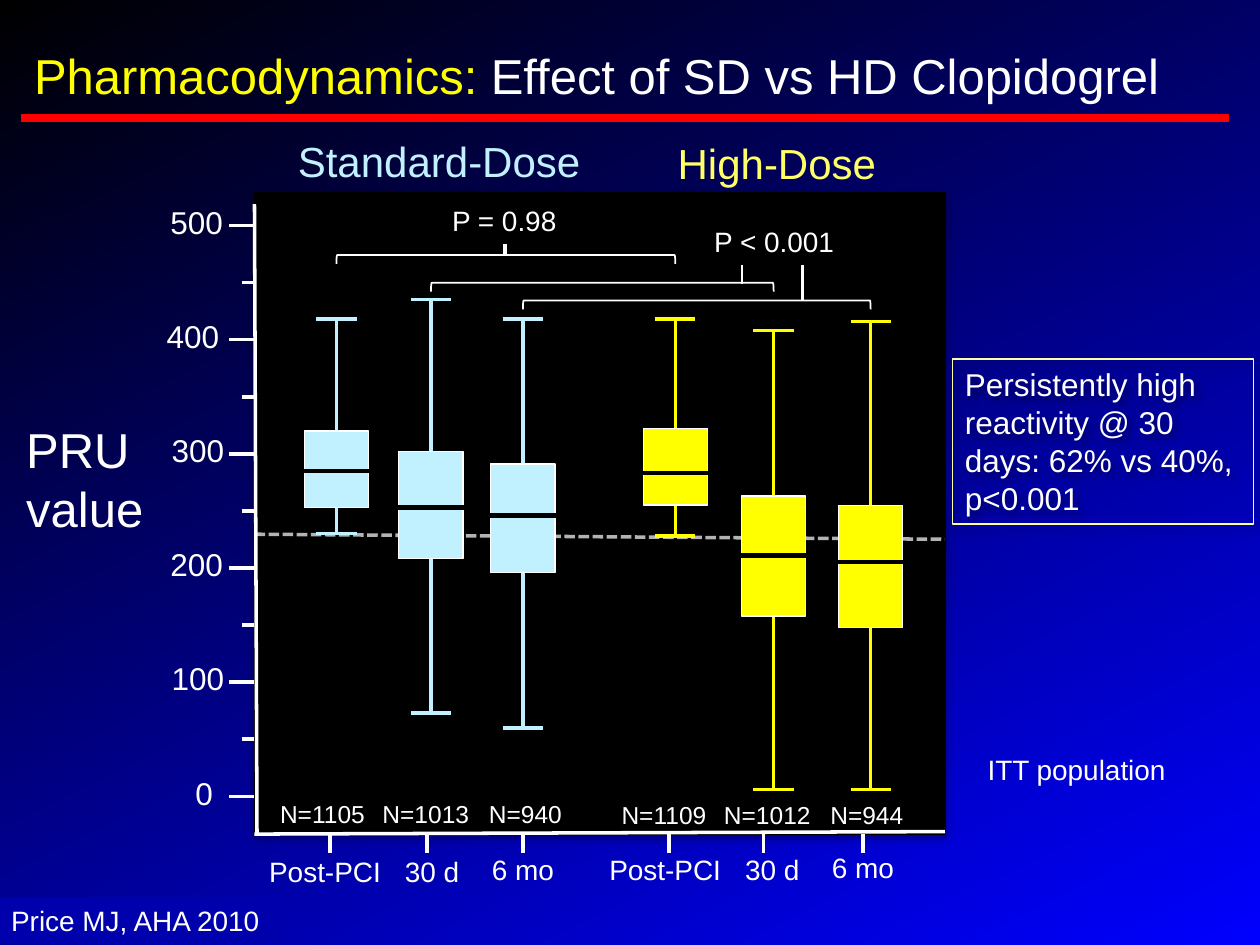
"""Build a slide with box plots of platelet reactivity for two clopidogrel doses."""
from dataclasses import dataclass

from lxml import etree
from pptx import Presentation
from pptx.dml.color import RGBColor
from pptx.enum.dml import MSO_LINE
from pptx.enum.shapes import MSO_CONNECTOR, MSO_SHAPE
from pptx.enum.text import MSO_ANCHOR, PP_ALIGN
from pptx.oxml.ns import qn
from pptx.util import Inches, Pt

STRAIGHT = MSO_CONNECTOR.STRAIGHT
RECTANGLE, BRACKET = MSO_SHAPE.RECTANGLE, MSO_SHAPE.LEFT_BRACKET
LEFT, CENTER = PP_ALIGN.LEFT, PP_ALIGN.CENTER
TOP, MIDDLE = MSO_ANCHOR.TOP, MSO_ANCHOR.MIDDLE
SHORT_DASH = MSO_LINE.SQUARE_DOT


@dataclass(frozen=True)
class Theme:
    font: str = "Arial"
    black: str = "000000"
    white: str = "FFFFFF"
    blue: str = "0000FF"
    citation_fill: str = "0000AC"
    red: str = "FF0000"
    yellow: str = "FFFF00"
    high_label: str = "FFFF66"
    standard: str = "C1F1FF"
    gray: str = "B3B3B3"
    callout_line: str = "FBFFA1"
    title: int = 28
    heading: int = 24
    body: int = 18
    label: int = 16
    count: int = 14


THEME = Theme()
TITLE = [("Pharmacodynamics: ", THEME.yellow), ("Effect of SD vs HD Clopidogrel", THEME.white)]
CALLOUT = "Persistently high reactivity @ 30 days: 62% vs 40%, p<0.001"
CITATION = "Price MJ, AHA 2010"

# label, count, centre, tick x, label x, label top, count x, count top, (maximum, upper, median, lower, minimum)
STANDARD_DOSE = [
    ("Post-PCI", "N=1105", 2.67, 2.62, 2.58, 6.73, 2.56, 6.29, (418, 320, 285, 253, 230)),
    ("30 d", "N=1013", 3.42, 3.39, 3.43, 6.73, 3.38, 6.29, (435, 302, 253, 208, 73)),
    ("6 mo", "N=940", 4.15, 4.15, 4.15, 6.72, 4.17, 6.29, (418, 291, 246, 196, 60)),
]
HIGH_DOSE = [
    ("Post-PCI", "N=1109", 5.36, 5.31, 5.28, 6.72, 5.27, 6.30, (418, 322, 283, 255, 228)),
    ("30 d", "N=1012", 6.14, 6.06, 6.13, 6.72, 6.09, 6.30, (408, 263, 211, 158, 6)),
    ("6 mo", "N=944", 6.91, 6.85, 6.85, 6.70, 6.88, 6.30, (416, 255, 205, 148, 6)),
]
GROUPS = [(STANDARD_DOSE, THEME.standard), (HIGH_DOSE, THEME.yellow)]
AXIS_LABELS = [(500, 1.56), (400, 1.53), (300, 1.57), (200, 1.56), (100, 1.57), (0, 1.62)]
BRACKET_LEVELS = [2.06, 2.28, 2.42]
COMPARISON_STEMS = [(4.01, 1.94, 2.02, 2), (5.89, 2.10, 2.25, 1.5), (6.37, 2.10, 2.38, 1.5)]
# text, left, top, width, height, size, colour, alignment
LABELS = [
    ("Standard-Dose", 2.25, 1.03, 2.47, 0.5, THEME.heading, THEME.standard, CENTER),
    ("High-Dose", 5.27, 1.04, 1.79, 0.5, THEME.heading, THEME.high_label, CENTER),
    ("PRU\nvalue", 0.11, 3.28, 1.15, 1.04, THEME.title, THEME.white, LEFT),
    ("P = 0.98", 3.49, 1.57, 1.04, 0.37, THEME.label, THEME.white, LEFT),
    ("P < 0.001", 5.57, 1.73, 1.16, 0.37, THEME.label, THEME.white, LEFT),
    ("ITT population", 7.74, 5.92, 1.63, 0.37, THEME.label, THEME.white, LEFT),
]
AXIS_X, AXIS_RIGHT, AXIS_BOTTOM = 2.02, 7.5, 6.62
ZERO_Y, FULL_SCALE, FULL_HEIGHT = 6.32, 500, 4.53
BOX_WIDTH, MEDIAN_WIDTH, CAP_WIDTH, BRACKET_DEPTH = 0.51, 0.53, 0.32, 0.07


def color(value):
    return RGBColor.from_string(value)


def value_y(value):
    return ZERO_Y - value * FULL_HEIGHT / FULL_SCALE


def add_line(slide, start, end, line_color, width=2.0, dash=None):
    line = slide.shapes.add_connector(STRAIGHT, *map(Inches, (*start, *end)))
    line.line.color.rgb = color(line_color)
    line.line.width = Pt(width)
    if dash:
        line.line.dash_style = dash
    etree.SubElement(line.element.spPr, qn("a:effectLst"))


def add_bar(slide, center, y, width, line_color, weight=2.0):
    add_line(slide, (center - width / 2, y), (center + width / 2, y), line_color, weight)


def add_shape(slide, kind, box, fill=None, line=None, width=0.75):
    shape = slide.shapes.add_shape(kind, *map(Inches, box))
    shape.shadow.inherit = False
    if fill:
        shape.fill.solid()
        shape.fill.fore_color.rgb = color(fill)
    else:
        shape.fill.background()
    if line:
        shape.line.color.rgb = color(line)
        shape.line.width = Pt(width)
    else:
        shape.line.fill.background()
    return shape


def add_shadow(shape, alpha, blur, distance, angle):
    effects = shape.element.spPr.find(qn("a:effectLst"))
    shadow = etree.SubElement(effects, qn("a:outerShdw"), blurRad=str(Pt(blur)),
                              dist=str(Pt(distance)), dir=str(angle * 60000), rotWithShape="0")
    shade = etree.SubElement(shadow, qn("a:srgbClr"), val=THEME.black)
    etree.SubElement(shade, qn("a:alpha"), val=str(alpha * 1000))


def set_text(shape, text, size, text_color=THEME.white, align=LEFT, wrap=False, anchor=TOP):
    frame = shape.text_frame
    frame.text = text
    frame.word_wrap = wrap
    frame.vertical_anchor = anchor
    for paragraph in frame.paragraphs:
        paragraph.alignment = align
        paragraph.font.name = THEME.font
        paragraph.font.size = Pt(size)
        paragraph.font.color.rgb = color(text_color)


def add_label(slide, text, left, top, width, height, size, text_color=THEME.white, align=CENTER):
    label = slide.shapes.add_textbox(*map(Inches, (left, top, width, height)))
    set_text(label, text, size, text_color, align)


def add_title(slide):
    title = slide.shapes.title
    title.left, title.top, title.width, title.height = map(Inches, (0.17, 0.31, 9.83, 0.57))
    title.text_frame.vertical_anchor = MIDDLE
    paragraph = title.text_frame.paragraphs[0]
    paragraph.alignment = LEFT
    paragraph.font.name = THEME.font
    paragraph.font.size = Pt(THEME.title)
    for text, text_color in TITLE:
        run = paragraph.add_run()
        run.text = text
        run.font.color.rgb = color(text_color)
    add_line(slide, (0.17, 0.94), (9.75, 0.94), THEME.red, 4.5)


def add_axes(slide):
    add_line(slide, (AXIS_X, 1.62), (AXIS_X + 0.02, AXIS_BOTTOM), THEME.white)
    add_line(slide, (AXIS_X, AXIS_BOTTOM), (AXIS_RIGHT, AXIS_BOTTOM - 0.02), THEME.white)
    for value in range(0, FULL_SCALE + 1, 50):
        length = 0.1 if value % 100 else 0.2
        add_line(slide, (AXIS_X - length, value_y(value)), (AXIS_X, value_y(value)), THEME.white)
    for value, center in AXIS_LABELS:
        add_label(slide, str(value), center - 0.31, value_y(value) - 0.23, 0.62, 0.4, THEME.body)


def add_box_plot(slide, record, fill):
    name, count, center, tick_x, name_x, name_top, count_x, count_top, values = record
    maximum, upper, median, lower, minimum = map(value_y, values)
    add_line(slide, (center, maximum), (center, minimum), fill)
    add_shape(slide, RECTANGLE, (center - BOX_WIDTH / 2, upper, BOX_WIDTH, lower - upper),
              fill, THEME.white)
    add_bar(slide, center, median, MEDIAN_WIDTH, THEME.black, 2.5)
    for cap in (maximum, minimum):
        add_bar(slide, center, cap, CAP_WIDTH, fill)
    add_line(slide, (tick_x, AXIS_BOTTOM), (tick_x, AXIS_BOTTOM + 0.15), THEME.white)
    add_label(slide, name, name_x - 0.55, name_top, 1.1, 0.37, THEME.label)
    add_label(slide, count, count_x - 0.45, count_top, 0.9, 0.34, THEME.count)


def add_comparisons(slide):
    for standard, high, level in zip(STANDARD_DOSE, HIGH_DOSE, BRACKET_LEVELS):
        span, middle = high[2] - standard[2], (high[2] + standard[2]) / 2
        box = (middle - BRACKET_DEPTH / 2, level - span / 2, BRACKET_DEPTH, span)
        bracket = add_shape(slide, BRACKET, box, line=THEME.white, width=1)
        bracket.rotation = 90
        bracket.adjustments[0] = 0.08
    for x, top, bottom, width in COMPARISON_STEMS:
        add_line(slide, (x, top), (x, bottom), THEME.white, width)


def main():
    presentation = Presentation()
    presentation.slide_width, presentation.slide_height = Inches(10), Inches(7.5)
    slide = presentation.slides.add_slide(presentation.slide_layouts[5])
    background = slide.background.fill
    background.gradient()
    background.gradient_angle = 296
    for stop, position, shade in zip(background.gradient_stops, (0, 1), (THEME.black, THEME.blue)):
        stop.position = position
        stop.color.rgb = color(shade)

    panel = add_shape(slide, RECTANGLE, (AXIS_X, 1.53, 5.48, 5.09), THEME.black, THEME.black)
    add_shadow(panel, 35, 5, 1.8, 90)
    add_line(slide, (AXIS_X, 4.24), (AXIS_RIGHT, 4.28), THEME.gray, 2, SHORT_DASH)
    add_title(slide)
    add_axes(slide)
    for records, fill in GROUPS:
        for record in records:
            add_box_plot(slide, record, fill)
    add_comparisons(slide)
    for label in LABELS:
        add_label(slide, *label)

    callout = add_shape(slide, RECTANGLE, (7.56, 2.85, 2.39, 1.31), line=THEME.callout_line)
    add_shadow(callout, 43, 5, 3, 45)
    set_text(callout, CALLOUT, THEME.body, wrap=True)
    citation = add_shape(slide, RECTANGLE, (-0.01, 7.12, 2.26, 0.37), THEME.citation_fill)
    set_text(citation, CITATION, THEME.label)
    presentation.save("out.pptx")


if __name__ == "__main__":
    main()
